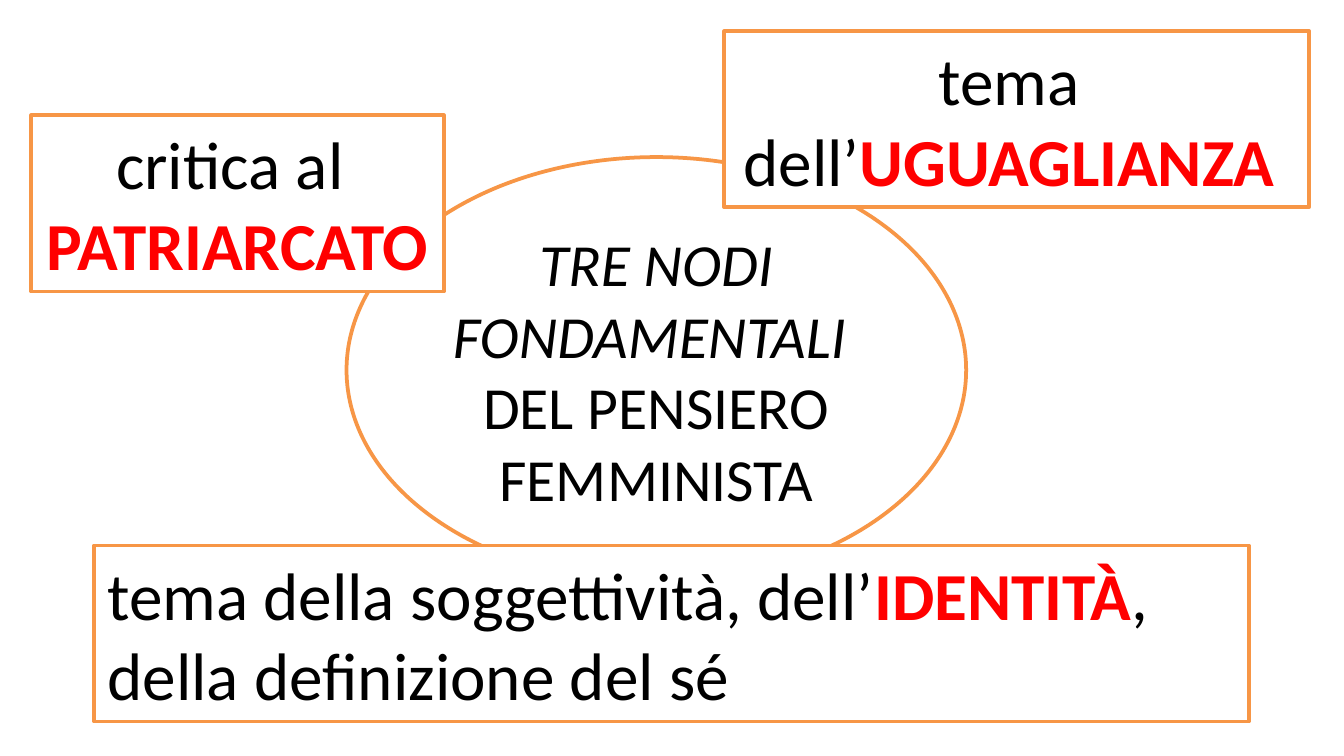
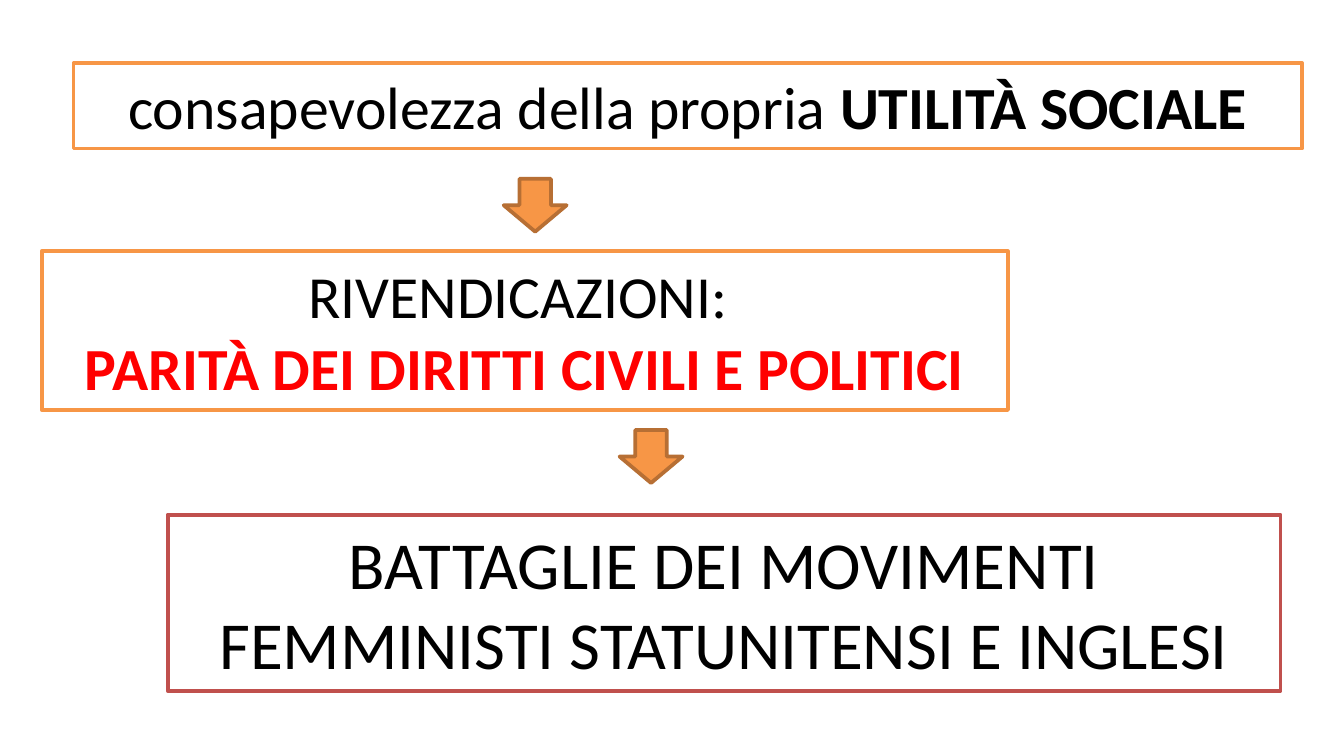
from pptx import Presentation, util as u
from pptx.dml.color import RGBColor
from pptx.enum import shapes, text

FONT = "Calibri"
ORANGE, DARK_ORANGE, BRICK = "F79646", "B76F34", "C0504D"
WHITE, BLACK, RED = "FFFFFF", "000000", "FF0000"
SHAPE = shapes.MSO_SHAPE
CENTER, LEFT = text.PP_ALIGN.CENTER, text.PP_ALIGN.LEFT
BOLD, ITALIC = {"bold": True}, {"italic": True}
KEY = {"bold": True, "color": RED}


def rgb(value):
    """Turn a hex string into a colour."""
    return RGBColor.from_string(value)


def add_figure(slide, kind, left, top, width, height, fill, line):
    """Draw a preset shape, measured in centimetres, with a 2 pt outline."""
    sp = slide.shapes.add_shape(kind, *map(u.Cm, (left, top, width, height)))
    sp.shadow.inherit = False
    sp.fill.solid()
    sp.fill.fore_color.rgb = rgb(fill)
    sp.line.color.rgb = rgb(line)
    sp.line.width = u.Pt(2)
    return sp


def add_run(p, words, size, bold=False, italic=False, color=BLACK):
    """Append one formatted run to a paragraph."""
    r = p.add_run()
    r.text = words
    f = r.font
    f.name, f.size, f.bold, f.italic = FONT, u.Pt(size), bold, italic
    f.color.rgb = rgb(color)


def add_box(slide, at, paragraphs, size, kind=SHAPE.RECTANGLE, line=ORANGE,
            align=CENTER, wrap=True):
    """Draw a white outlined shape holding paragraphs of (words, style) runs."""
    sp = add_figure(slide, kind, *at, WHITE, line)
    tf = sp.text_frame
    tf.word_wrap = wrap
    tf.auto_size = text.MSO_AUTO_SIZE.SHAPE_TO_FIT_TEXT
    for i, runs in enumerate(paragraphs):
        p = tf.add_paragraph() if i else tf.paragraphs[0]
        p.alignment = align
        for words, style in runs:
            add_run(p, words, size, **style)


def add_down_arrow(slide, left, top):
    """Draw a small arrow leading to the next step."""
    add_figure(slide, SHAPE.DOWN_ARROW, left, top, 1.19, 1, ORANGE, DARK_ORANGE)


def add_themes(slide):
    """Build the three themes around the central ellipse."""
    add_box(slide, (6.55, 2.97, 11.71, 8.05),
            [[("TRE NODI FONDAMENTALI ", ITALIC)], [("DEL PENSIERO FEMMINISTA", {})]],
            32, kind=SHAPE.OVAL)
    add_box(slide, (0.59, 2.18, 7.8, 3.33),
            [[("critica al ", {})], [("PATRIARCATO", KEY)]], 36, wrap=False)
    add_box(slide, (13.69, 0.59, 11.05, 3.33),
            [[("tema ", {})], [("dell’", {}), ("UGUAGLIANZA ", KEY)]], 36, wrap=False)
    add_box(slide, (1.78, 10.31, 21.82, 3.33),
            [[("tema della soggettività, dell’", {}), ("IDENTITÀ", KEY),
              (", della definizione del sé", {})]], 36, align=LEFT)


def add_claims(slide):
    """Build the steps from awareness to the movements' battles."""
    add_box(slide, (1.39, 1.19, 23.22, 1.62),
            [[("consapevolezza della propria ", {}), ("UTILITÀ SOCIALE", BOLD)]], 32)
    add_box(slide, (0.79, 4.75, 18.26, 3),
            [[("RIVENDICAZIONI: ", {})],
             [("PARITÀ DEI DIRITTI CIVILI E POLITICI", KEY)]], 32)
    add_box(slide, (3.17, 9.73, 21.03, 3.33),
            [[("BATTAGLIE DEI MOVIMENTI FEMMINISTI STATUNITENSI E INGLESI", {})]],
            36, line=BRICK)
    for left, top in ((9.52, 3.38), (11.71, 8.13)):
        add_down_arrow(slide, left, top)


def main():
    """Create the presentation and save it."""
    prs = Presentation()
    prs.slide_width, prs.slide_height = u.Cm(25.4), u.Cm(14.29)
    for build in (add_themes, add_claims):
        build(prs.slides.add_slide(prs.slide_layouts[6]))
    prs.save("out.pptx")


if __name__ == "__main__":
    main()
